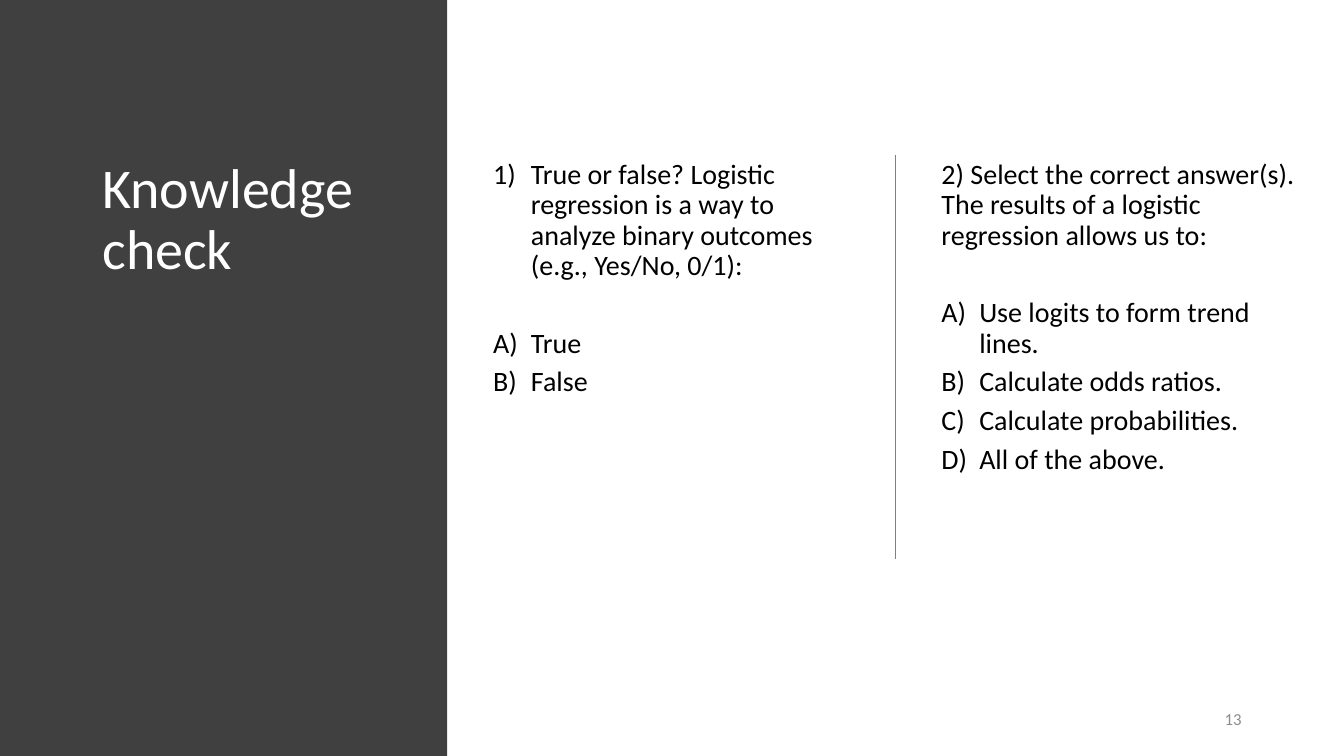
"""Build the knowledge check slide with two quiz questions beside a dark title panel."""

from dataclasses import dataclass

from lxml import etree
from pptx import Presentation
from pptx.dml.color import RGBColor
from pptx.enum.shapes import MSO_CONNECTOR, MSO_SHAPE
from pptx.enum.text import MSO_ANCHOR, MSO_AUTO_SIZE, PP_ALIGN
from pptx.oxml.ns import qn
from pptx.util import Pt

EMU_PER_PX = 9525
PAGE_WIDTH, PAGE_HEIGHT = 1280, 720
PANEL_WIDTH = 426
TOP, TEXT_HEIGHT = 148, 458
HANGING_INDENT = 36
DIVIDER_X, DIVIDER_BOTTOM = 853, 532
TWO_CONTENT_LAYOUT = 3
FONT = "Calibri"
COLORS = {
    "panel": "404040",
    "title": "FFFFFF",
    "body": "000000",
    "divider": "808080",
    "number": "8C8C8C",
}
RECTANGLE = MSO_SHAPE.RECTANGLE
STRAIGHT = MSO_CONNECTOR.STRAIGHT
ANCHOR_TOP, ANCHOR_MIDDLE = MSO_ANCHOR.TOP, MSO_ANCHOR.MIDDLE
NO_AUTOFIT = MSO_AUTO_SIZE.NONE
LEFT, RIGHT = PP_ALIGN.LEFT, PP_ALIGN.RIGHT


@dataclass(frozen=True)
class Question:
    """A quiz question and its lettered answers."""

    placeholder: int
    left: int
    prompt: str
    answers: tuple[str, ...]
    numbering: str | None = None


QUESTIONS = (
    Question(
        1,
        460,
        "True or false? Logistic regression is a way to analyze binary outcomes "
        "(e.g., Yes/No, 0/1):",
        ("True", "False"),
        "arabicParenR",
    ),
    Question(
        2,
        887,
        "2) Select the correct answer(s). The results of a logistic regression allows us to:",
        (
            "Use logits to form trend lines.",
            "Calculate odds ratios.",
            "Calculate probabilities.",
            "All of the above.",
        ),
    ),
)


def px(length: int) -> int:
    """Turn pixels into EMU."""
    return length * EMU_PER_PX


def color(name: str) -> RGBColor:
    """Look up a named colour."""
    return RGBColor.from_string(COLORS[name])


def place(box, left: int, top: int, width: int, height: int) -> None:
    """Move and size a text box and fix how its text fits."""
    box.left, box.top, box.width, box.height = map(px, (left, top, width, height))
    box.text_frame.word_wrap = True
    box.text_frame.auto_size = NO_AUTOFIT
    box.text_frame.vertical_anchor = ANCHOR_TOP


def style(para, size: int, color_name: str, after: int = 0, align=LEFT) -> None:
    """Set the spacing, alignment and font of a paragraph."""
    para.alignment = align
    para.line_spacing = 0.9
    para.space_before = Pt(0)
    para.space_after = Pt(after)
    para.font.name = FONT
    para.font.size = Pt(size)
    para.font.color.rgb = color(color_name)


def number(para, numbering: str | None) -> None:
    """Give a paragraph automatic numbering, or no bullet at all."""
    properties = para._p.get_or_add_pPr()
    indent = px(HANGING_INDENT) if numbering else 0
    properties.set("marL", str(indent))
    properties.set("indent", str(-indent))
    bullet = etree.Element(qn("a:buAutoNum" if numbering else "a:buNone"))
    if numbering:
        bullet.set("type", numbering)
    properties.find(qn("a:defRPr")).addprevious(bullet)


def add_panel(page) -> None:
    """Draw the dark panel behind the title."""
    panel = page.shapes.add_shape(RECTANGLE, 0, 0, px(PANEL_WIDTH), px(PAGE_HEIGHT))
    panel.shadow.inherit = False
    panel.fill.solid()
    panel.fill.fore_color.rgb = color("panel")
    panel.line.fill.background()
    page.shapes.title._element.addprevious(panel._element)


def add_title(page) -> None:
    """Fill the title placeholder."""
    title = page.shapes.title
    place(title, 88, TOP, 304, TEXT_HEIGHT)
    title.text_frame.text = "Knowledge check"
    style(title.text_frame.paragraphs[0], 40, "title")


def add_question(page, question: Question) -> None:
    """Fill a body placeholder with a question and its answers."""
    box = page.placeholders[question.placeholder]
    place(box, question.left, TOP, 360, TEXT_HEIGHT)
    box.text_frame.text = "\n".join((question.prompt, *question.answers))
    prompt, *answers = box.text_frame.paragraphs
    style(prompt, 20, "body", after=34)
    number(prompt, question.numbering)
    for answer in answers:
        style(answer, 20, "body", after=6)
        number(answer, "alphaUcParenR")


def add_divider(page) -> None:
    """Draw the line between the questions."""
    divider = page.shapes.add_connector(
        STRAIGHT, px(DIVIDER_X), px(TOP), px(DIVIDER_X), px(DIVIDER_BOTTOM)
    )
    divider.line.color.rgb = color("divider")
    divider.line.width = Pt(1)
    etree.SubElement(divider._element.spPr, qn("a:effectLst"))


def add_page_number(page) -> None:
    """Write the page number at the bottom right."""
    box = page.shapes.add_textbox(0, 0, 0, 0)
    place(box, 966, 667, 226, 38)
    box.text_frame.vertical_anchor = ANCHOR_MIDDLE
    box.text_frame.text = "13"
    style(box.text_frame.paragraphs[0], 12, "number", after=6, align=RIGHT)


def main() -> None:
    """Build and save the deck."""
    deck = Presentation()
    deck.slide_width, deck.slide_height = px(PAGE_WIDTH), px(PAGE_HEIGHT)
    page = deck.slides.add_slide(deck.slide_layouts[TWO_CONTENT_LAYOUT])
    add_panel(page)
    add_title(page)
    for question in QUESTIONS:
        add_question(page, question)
    add_divider(page)
    add_page_number(page)
    deck.save("out.pptx")


if __name__ == "__main__":
    main()
